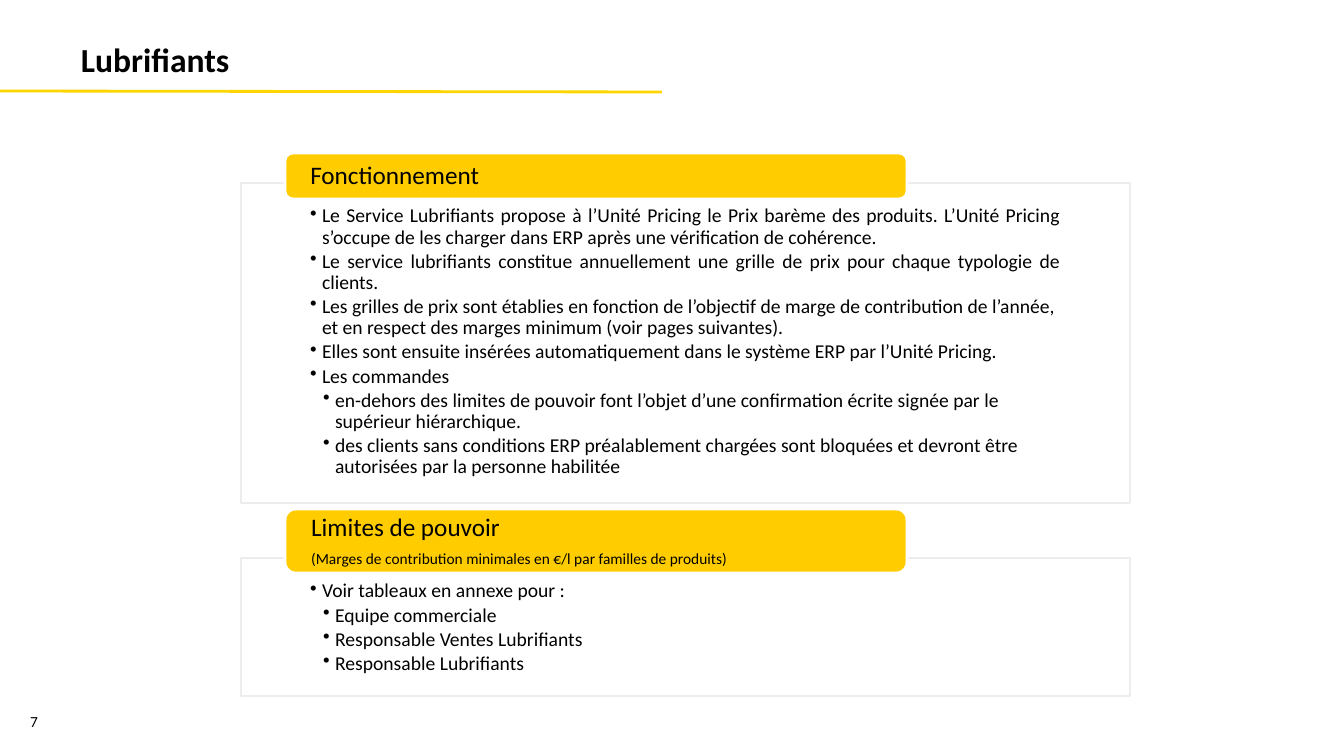
"""Build the "Lubrifiants" slide: two framed sections with yellow headings."""
from lxml.etree import SubElement
from pptx import Presentation
from pptx.dml.color import RGBColor
from pptx.enum.shapes import MSO_CONNECTOR as Connector, MSO_SHAPE as Shape
from pptx.enum.text import MSO_ANCHOR as Anchor, MSO_AUTO_SIZE as AutoSize, PP_ALIGN as Align
from pptx.oxml.ns import qn
from pptx.util import Pt

SCALE = 9071.43
BULLET_MARGINS = {1: 12, 2: 25}


def px(*lengths):
    return [round(length * SCALE) for length in lengths]


def write(frame, paragraphs, anchor=Anchor.TOP, insets=(10, 5, 10, 5), spacing=None,
          size=14, after=0, bold=False, align=Align.LEFT):
    """Fill a frame with (text, options) pairs; options override the shared format."""
    frame.word_wrap = True
    frame.auto_size = AutoSize.NONE
    frame.vertical_anchor = anchor
    frame.margin_left, frame.margin_top, frame.margin_right, frame.margin_bottom = px(*insets)
    for index, (text, options) in enumerate(paragraphs):
        para = frame.add_paragraph() if index else frame.paragraphs[0]
        para.alignment = options.get("align", align)
        para.line_spacing = spacing
        text_size = options.get("size", size)
        para.space_before = Pt(0)
        para.space_after = Pt(round(text_size * after, 1))
        level = options.get("level", 0)
        if level:
            margin, hang = px(BULLET_MARGINS[level], -12)
            properties = para._p.get_or_add_pPr()
            properties.set("marL", str(margin))
            properties.set("indent", str(hang))
            SubElement(properties, qn("a:buChar")).set("char", "•")
        span = para.add_run()
        span.text = text
        span.font.name = "Calibri"
        span.font.size = Pt(text_size)
        span.font.bold = bold
        span.font.color.rgb = RGBColor.from_string("000000")


deck = Presentation()
deck.slide_width, deck.slide_height = px(1344, 756)
page = deck.slides.add_slide(deck.slide_layouts[5])

rule = page.shapes.add_connector(Connector.STRAIGHT, *px(0, 91, 662, 92))
rule.line.color.rgb = RGBColor.from_string("FFD500")
rule.line.width = Pt(2)
SubElement(rule._element.spPr, qn("a:effectLst"))

title = page.shapes.title
title.left, title.top, title.width, title.height = px(71, 19, 1116, 86)
write(title.text_frame, [("Lubrifiants", {})], anchor=Anchor.MIDDLE, spacing=Pt(24), size=24, bold=True)

number = page.shapes.add_textbox(*px(0, 700, 68, 36))
write(number.text_frame, [("7", {})], anchor=Anchor.BOTTOM, size=11, align=Align.CENTER)

first, second = {"level": 1}, {"level": 2}
justified = {"level": 1, "align": Align.JUSTIFY}
operation = [
    ("Le Service Lubrifiants propose à l’Unité Pricing le Prix barème des produits. L’Unité Pricing "
     "s’occupe de les charger dans ERP après une vérification de cohérence.", justified),
    ("Le service lubrifiants constitue annuellement une grille de prix pour chaque typologie de "
     "clients.", justified),
    ("Les grilles de prix sont établies en fonction de l’objectif de marge de contribution de l’année, "
     "et en respect des marges minimum (voir pages suivantes).", first),
    ("Elles sont ensuite insérées automatiquement dans le système ERP par l’Unité Pricing.", first),
    ("Les commandes", first),
    ("en-dehors des limites de pouvoir font l’objet d’une confirmation écrite signée par le "
     "supérieur hiérarchique.", second),
    ("des clients sans conditions ERP préalablement chargées sont bloquées et devront être "
     "autorisées par la personne habilitée", second),
]
limits = [
    ("Voir tableaux en annexe pour :", first),
    ("Equipe commerciale", second),
    ("Responsable Ventes Lubrifiants", second),
    ("Responsable Lubrifiants", second),
]
limits_heading = [
    ("Limites de pouvoir", {}),
    ("(Marges de contribution minimales en €/l par familles de produits)", {"size": 11}),
]
sections = [
    (183, 320, operation, 153, 46, [("Fonctionnement", {})]),
    (558, 138, limits, 509, 64, limits_heading),
]

for body_top, body_height, items, tab_top, tab_height, heading in sections:
    body = page.shapes.add_shape(Shape.RECTANGLE, *px(241, body_top, 889, body_height))
    tab = page.shapes.add_shape(Shape.ROUNDED_RECTANGLE, *px(285, tab_top, 622, tab_height))
    for shape, fill, outline in ((body, "FFFFFF", "EDEDED"), (tab, "FFCC00", "FFFFFF")):
        shape.shadow.inherit = False
        shape.fill.solid()
        shape.fill.fore_color.rgb = RGBColor.from_string(fill)
        shape.line.color.rgb = RGBColor.from_string(outline)
        shape.line.width = Pt(2)
    body_color = body._element.spPr.find(qn("a:solidFill"))[0]
    SubElement(body_color, qn("a:alpha")).set("val", "90000")
    write(body.text_frame, items, insets=(69, 23, 69, 11), spacing=0.9, after=0.15)
    write(tab.text_frame, heading, anchor=Anchor.MIDDLE, insets=(23, 0, 23, 0),
          spacing=0.9, size=18, after=0.35)

deck.save("out.pptx")
